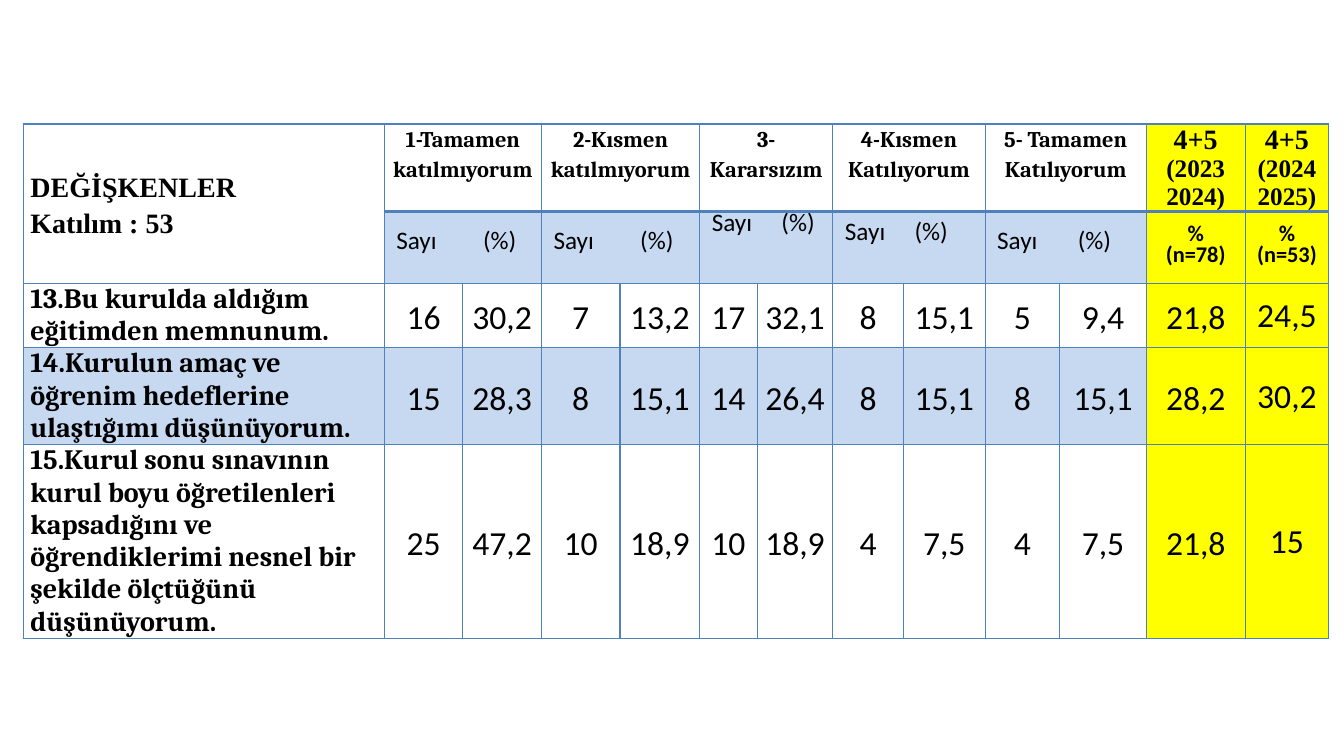
from dataclasses import dataclass

from lxml import etree
from pptx import Presentation
from pptx import util as u
from pptx.dml import color
from pptx.enum import text
from pptx.oxml import ns


@dataclass(frozen=True)
class Theme:
    ink: str = "000000"
    border: str = "4F81BD"
    band: str = "C6D9F1"
    highlight: str = "FFFF00"
    label_font: str = "Times New Roman"
    statement_font: str = "Cambria"
    figure_font: str = "Calibri"
    small: int = 16
    medium: int = 18
    large: int = 20
    figure: int = 24
    thin: float = 1
    thick: float = 2.25


def write(frame, *lines, font, size, ink, bold=False, align=None, spacing=None, tab=None):
    """Write one paragraph per line; a line may be a (text, size) pair."""
    for index, line in enumerate(lines):
        words, line_size = line if isinstance(line, tuple) else (line, size)
        paragraph = frame.paragraphs[0] if index == 0 else frame.add_paragraph()
        if tab:
            stops = etree.SubElement(paragraph._p.get_or_add_pPr(), ns.qn("a:tabLst"))
            etree.SubElement(stops, ns.qn("a:tab"), pos=str(tab), algn="l")
        if align:
            paragraph.alignment = align
        if spacing:
            paragraph.line_spacing = spacing
        run = paragraph.add_run()
        run.text = words
        run.font.name = font
        run.font.size = u.Pt(line_size)
        run.font.bold = bold
        run.font.color.rgb = color.RGBColor.from_string(ink)


class Deck:
    """Holds the theme and the current slide; lengths are percentages of the slide."""

    def __init__(self, theme):
        self.theme = theme
        self.show = Presentation()
        self.show.slide_width, self.show.slide_height = u.Inches(13.33), u.Inches(7.5)
        self.slide = self.show.slides.add_slide(self.show.slide_layouts[6])

    def across(self, share):
        return u.Emu(round(self.show.slide_width * share / 100))

    def down(self, share):
        return u.Emu(round(self.show.slide_height * share / 100))

    def table(self, left, top, columns, rows):
        table = self.slide.shapes.add_table(
            len(rows), len(columns), self.across(left), self.down(top),
            self.across(sum(columns)), self.down(sum(rows))).table
        table.first_row = table.horz_banding = False
        for column, share in zip(table.columns, columns):
            column.width = self.across(share)
        for row, share in zip(table.rows, rows):
            row.height = self.down(share)
        return table

    def borders(self, cell, **widths):
        properties = cell._tc.get_or_add_tcPr()
        for side in "LRTB":
            width = widths.get(side, self.theme.thin)
            line = etree.SubElement(properties, ns.qn(f"a:ln{side}"), w=str(u.Pt(width)))
            fill = etree.SubElement(line, ns.qn("a:solidFill"))
            etree.SubElement(fill, ns.qn("a:srgbClr"), val=self.theme.border)

    def paint(self, cell, fill):
        if fill:
            cell.fill.solid()
            cell.fill.fore_color.rgb = color.RGBColor.from_string(fill)
        else:
            cell.fill.background()

    def fill_cell(self, cell, *lines, middle=True, side=0.53, left=None,
                  top=0, bottom=0, **style):
        cell.margin_left = self.across(side if left is None else left)
        cell.margin_right = self.across(side)
        cell.margin_top, cell.margin_bottom = self.down(top), self.down(bottom)
        cell.vertical_anchor = text.MSO_ANCHOR.MIDDLE if middle else text.MSO_ANCHOR.TOP
        write(cell.text_frame, *lines, ink=self.theme.ink, **style)


COLUMNS = [26.86, 5.85, 5.85, 5.85, 5.93, 4.28, 5.63, 5.25, 6.08, 5.55, 6.45, 7.35, 6.23]
ROWS = [11.6, 9.47, 8.53, 12.8, 25.6]

# Answer heading, tab to its percentage, space below its subheading
ANSWERS = [
    ("1-Tamamen katılmıyorum", 6.45, 0),
    ("2-Kısmen katılmıyorum", 6.45, 0),
    ("3-Kararsızım", 5.18, 4.8),
    ("4-Kısmen Katılıyorum", 5.18, 2.4),
    ("5- Tamamen Katılıyorum", 6, 0),
]
PERIODS = [("(2023 2024)", "(n=78)"), ("(2024 2025)", "(n=53)")]
STATEMENTS = [
    ("13.Bu kurulda aldığım eğitimden memnunum.",
     "16 30,2 7 13,2 17 32,1 8 15,1 5 9,4 21,8 24,5"),
    ("14.Kurulun amaç ve öğrenim hedeflerine ulaştığımı düşünüyorum.",
     "15 28,3 8 15,1 14 26,4 8 15,1 8 15,1 28,2 30,2"),
    ("15.Kurul sonu sınavının kurul boyu öğretilenleri kapsadığını ve "
     "öğrendiklerimi nesnel bir şekilde ölçtüğünü düşünüyorum.",
     "25 47,2 10 18,9 10 18,9 4 7,5 4 7,5 21,8 15"),
]


def main():
    theme = Theme()
    deck = Deck(theme)
    center = text.PP_ALIGN.CENTER
    survey = deck.table(1.73, 16.4, COLUMNS, ROWS)
    first_period = 1 + 2 * len(ANSWERS)

    # Borders and fills
    for row in range(len(ROWS)):
        for column in range(len(COLUMNS)):
            cell = survey.cell(row, column)
            rule = {0: "B", 1: "T"}.get(row) if column else None
            deck.borders(cell, **({rule: theme.thick} if rule else {}))
            banded = row == 3 or (row == 1 and column > 0)
            deck.paint(cell, theme.highlight if column >= first_period
                       else theme.band if banded else None)

    # Variables heading
    survey.cell(0, 0).merge(survey.cell(1, 0))
    deck.fill_cell(survey.cell(0, 0), "DEĞİŞKENLER", "Katılım : 53",
                   font=theme.label_font, size=theme.large, bold=True, spacing=1.15)

    # Answer headings, each over a count and a percentage
    for index, (answer, tab, space_below) in enumerate(ANSWERS):
        column = 1 + 2 * index
        for row in (0, 1):
            survey.cell(row, column).merge(survey.cell(row, column + 1))
        deck.fill_cell(survey.cell(0, column), answer, middle=False, bold=True,
                       font=theme.statement_font, size=theme.small,
                       align=center, spacing=1.15)
        deck.fill_cell(survey.cell(1, column), "Sayı\t(%)", left=0.9, bottom=space_below,
                       font=theme.figure_font, size=theme.medium,
                       spacing=u.Pt(13), tab=deck.across(tab))

    # Agreement totals by period
    for column, (period, respondents) in enumerate(PERIODS, first_period):
        deck.fill_cell(survey.cell(0, column), ("4+5", theme.large), period, middle=False,
                       font=theme.label_font, size=theme.medium, bold=True, align=center)
        deck.fill_cell(survey.cell(1, column), "%", respondents, font=theme.figure_font,
                       size=theme.small, bold=True, align=center, spacing=u.Pt(15))

    # Statements and their results
    for row, (statement, results) in enumerate(STATEMENTS, 2):
        deck.fill_cell(survey.cell(row, 0), statement, middle=False, bold=True,
                       font=theme.statement_font, size=theme.large)
        for column, result in enumerate(results.split(), 1):
            latest = column == len(COLUMNS) - 1
            layout = {"side": 0.08, "top": 0.13} if latest else {"spacing": 1.15}
            deck.fill_cell(survey.cell(row, column), result, font=theme.figure_font,
                           size=theme.figure, align=center, **layout)

    deck.show.save("out.pptx")


if __name__ == "__main__":
    main()
